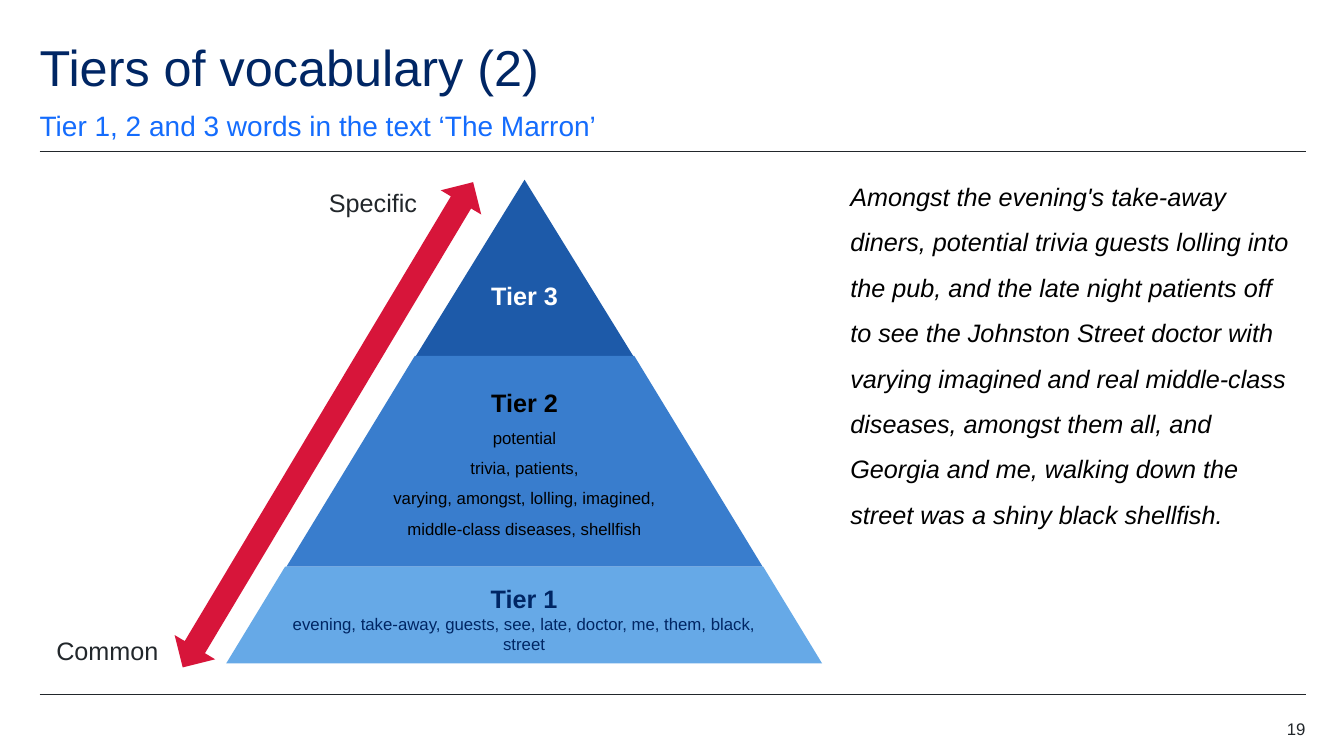
from lxml import etree
from pptx import Presentation
from pptx.dml.color import RGBColor
from pptx.enum import shapes, text
from pptx.oxml import ns
from pptx.util import Cm, Pt

NAVY = RGBColor(0x00, 0x26, 0x64)
BLUE = RGBColor(0x14, 0x6C, 0xFD)
DEEP = RGBColor(0x1D, 0x5A, 0xA9)
MID = RGBColor(0x39, 0x7D, 0xCD)
PALE = RGBColor(0x66, 0xA9, 0xE7)
RED = RGBColor(0xD7, 0x15, 0x3A)
INK = RGBColor(0x22, 0x27, 0x2B)
BLACK = RGBColor(0, 0, 0)
WHITE = RGBColor(0xFF, 0xFF, 0xFF)

KIND = shapes.MSO_SHAPE
TOP = text.MSO_ANCHOR.TOP
MIDDLE = text.MSO_ANCHOR.MIDDLE
BOTTOM = text.MSO_ANCHOR.BOTTOM
LEFT = text.PP_ALIGN.LEFT
CENTER = text.PP_ALIGN.CENTER
RIGHT = text.PP_ALIGN.RIGHT
EDGE, END = 1.0, 32.9
SLOPE = 0.609
PASSAGE = (
    "Amongst the evening's take-away diners, potential trivia guests lolling "
    "into the pub, and the late night patients off to see the Johnston Street "
    "doctor with varying imagined and real middle-class diseases, amongst them "
    "all, and Georgia and me, walking down the street was a shiny black shellfish."
)


def set_frame(frame, anchor=TOP, pad=(0, 0, 0, 0)):
    frame.word_wrap = True
    frame.auto_size = text.MSO_AUTO_SIZE.NONE
    frame.vertical_anchor = anchor
    sides = [Cm(side) for side in pad]
    frame.margin_left, frame.margin_top, frame.margin_right, frame.margin_bottom = sides


def set_para(para, words, size, color, align=LEFT, space=1.0, after=0,
             bold=False, italic=False):
    para.text = words
    para.alignment = align
    para.line_spacing = space
    para.space_before = Pt(0)
    para.space_after = Pt(after)
    font = para.font
    font.name, font.size = "Arial", Pt(size)
    font.bold, font.italic = bold, italic
    font.color.rgb = color


def add_text(slide, box, words, size, color, anchor=TOP, pad=(0, 0, 0, 0), **style):
    frame = slide.shapes.add_textbox(*map(Cm, box)).text_frame
    set_frame(frame, anchor, pad)
    set_para(frame.paragraphs[0], words, size, color, **style)


def add_rule(slide, y):
    rule = slide.shapes.add_connector(
        shapes.MSO_CONNECTOR.STRAIGHT, Cm(EDGE), Cm(y), Cm(END), Cm(y))
    rule.line.color.rgb = INK
    rule.line.width = Pt(0.5)
    props = rule._element.spPr
    etree.SubElement(props, ns.qn("a:effectLst"))


def add_solid(slide, kind, box, fill):
    solid = slide.shapes.add_shape(kind, *map(Cm, box))
    solid.shadow.inherit = False
    solid.fill.solid()
    solid.fill.fore_color.rgb = fill
    solid.line.fill.background()
    return solid


def add_tier(slide, kind, box, fill, color, head, words=(), anchor=TOP,
             space=1.0, base=0.13):
    tier = add_solid(slide, kind, box, fill)
    if kind == KIND.TRAPEZOID:
        tier.adjustments[0] = SLOPE
    frame = tier.text_frame
    set_frame(frame, anchor, (0.25, 0.13, 0.25, base))
    set_para(frame.paragraphs[0], head, 18, color, CENTER, space, bold=True)
    for line in words:
        set_para(frame.add_paragraph(), line, 12, color, CENTER, space)


def add_title(slide, words):
    title = slide.shapes.title
    title.left, title.top, title.width, title.height = map(Cm, (EDGE, 1, 28, 1.52))
    set_frame(title.text_frame, MIDDLE)
    set_para(title.text_frame.paragraphs[0], words, 36, NAVY, space=0.9)


def main():
    deck = Presentation()
    deck.slide_width, deck.slide_height = Cm(33.87), Cm(19.05)
    slide = deck.slides.add_slide(deck.slide_layouts[5])

    for y in (3.81, 17.5):
        add_rule(slide, y)
    add_title(slide, "Tiers of vocabulary (2)")
    add_text(slide, (EDGE, 2.72, 28, 0.86),
             "Tier 1, 2 and 3 words in the text ‘The Marron’",
             20, BLUE, BOTTOM, space=1.5, after=12)

    add_tier(slide, KIND.ISOSCELES_TRIANGLE, (10.26, 4.53, 5.92, 4.8),
             DEEP, WHITE, "Tier 3")
    add_tier(slide, KIND.TRAPEZOID, (7.22, 8.97, 12, 5.31), MID, BLACK, "Tier 2",
             ("potential", "trivia, patients,",
              "varying, amongst, lolling, imagined, middle-class diseases, shellfish"),
             BOTTOM, 1.5, 0.71)
    add_tier(slide, KIND.TRAPEZOID, (5.7, 14.28, 15.02, 2.44), PALE, NAVY, "Tier 1",
             ("evening, take-away, guests, see, late, doctor, me, them, black, street",),
             MIDDLE)

    arrow = add_solid(slide, KIND.UP_DOWN_ARROW, (7.67, 3.58, 1.19, 14.25), RED)
    arrow.rotation = 30.9
    add_text(slide, (8.29, 4.72, 2.44, 1.14), "Specific", 18, INK)
    add_text(slide, (1.42, 16, 2.67, 1.14), "Common", 18, INK)

    add_text(slide, (21.18, 4.06, 11.73, 9.35), PASSAGE, 18, BLACK,
             pad=(0.25, 0.13, 0.25, 0.13), space=1.5, after=12, italic=True)
    add_text(slide, (30.9, 18.11, 2, 0.51), "19", 12, INK, align=RIGHT)
    deck.save("out.pptx")


if __name__ == "__main__":
    main()
